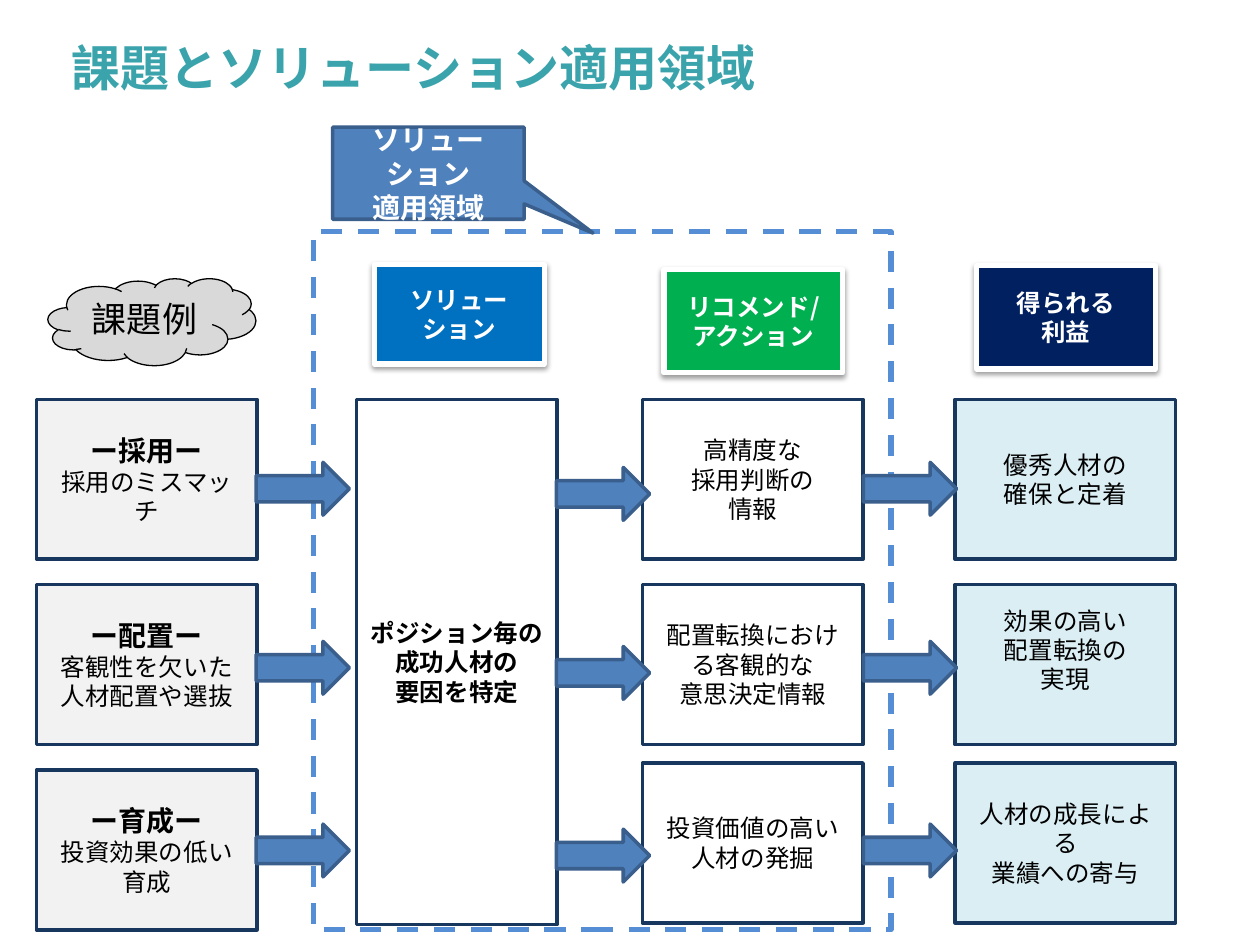
from dataclasses import dataclass

from lxml.etree import SubElement
from pptx import Presentation
from pptx.dml.color import RGBColor
from pptx.enum.dml import MSO_LINE
from pptx.enum.shapes import MSO_SHAPE as Shape
from pptx.enum.text import MSO_ANCHOR as Anchor, MSO_AUTO_SIZE as AutoSize, PP_ALIGN as Align
from pptx.oxml.ns import qn
from pptx.util import Pt


@dataclass(frozen=True)
class Theme:
    font: str = "Noto Sans CJK JP"
    title: str = "3BA3AB"
    white: str = "FFFFFF"
    black: str = "000000"
    navy_line: str = "17375E"
    issue: str = "F2F2F2"
    benefit: str = "DBEEF4"
    solution_head: str = "0070C0"
    action_head: str = "00B050"
    benefit_head: str = "002060"
    cloud: str = "D9D9D9"
    frame: str = "558ED5"
    accent: str = "4F81BD"
    accent_line: str = "3A5F8C"
    title_size: int = 28
    cloud_size: int = 20
    lead_size: int = 16
    body_size: int = 14


@dataclass(frozen=True)
class Line:
    text: str
    size: int
    bold: bool = False


class Board:
    def __init__(self, slide, theme):
        self.slide = slide
        self.theme = theme

    def add_lines(self, frame, lines, color, align=Align.CENTER):
        for index, line in enumerate(lines):
            para = frame.add_paragraph() if index else frame.paragraphs[0]
            para.alignment = align
            run = para.add_run()
            run.text = line.text
            font = run.font
            font.name, font.size, font.bold = self.theme.font, Pt(line.size), line.bold
            font.color.rgb = RGBColor.from_string(color)
            # Japanese glyphs take the East Asian typeface
            SubElement(font._element, qn("a:ea"), typeface=self.theme.font)

    def title(self, text, left, top, width, height):
        holder = self.slide.shapes.title
        holder.left, holder.top, holder.width, holder.height = map(Pt, (left, top, width, height))
        frame = holder.text_frame
        frame.auto_size = AutoSize.NONE
        frame.vertical_anchor = Anchor.MIDDLE
        frame.margin_left = Pt(13.5)
        self.add_lines(frame, [Line(text, self.theme.title_size, True)], self.theme.title,
                       Align.LEFT)

    def shape(self, kind, left, top, width, height, fill, line, weight):
        item = self.slide.shapes.add_shape(kind, *map(Pt, (left, top, width, height)))
        item.shadow.inherit = False
        if fill:
            item.fill.solid()
            item.fill.fore_color.rgb = RGBColor.from_string(fill)
        else:
            item.fill.background()
        item.line.color.rgb = RGBColor.from_string(line)
        item.line.width = Pt(weight)
        return item

    def box(self, left, top, width, height, fill, lines, bottom_inset=3.6):
        item = self.shape(Shape.RECTANGLE, left, top, width, height, fill, self.theme.navy_line, 2)
        item.text_frame.margin_bottom = Pt(bottom_inset)
        self.add_lines(item.text_frame, lines, self.theme.black)

    def heading(self, left, top, width, height, fill, texts):
        """White-edged column heading with a soft shadow below it."""
        item = self.shape(Shape.RECTANGLE, left, top, width, height, fill, self.theme.white, 3)
        effects = item._element.spPr.find(qn("a:effectLst"))
        shadow = SubElement(effects, qn("a:outerShdw"), blurRad=str(Pt(3.1)), dist=str(Pt(1.6)),
                            dir="5400000", rotWithShape="0")
        color = SubElement(shadow, qn("a:srgbClr"), val=self.theme.black)
        SubElement(color, qn("a:alpha"), val="38000")
        self.add_lines(item.text_frame, [Line(t, self.theme.body_size, True) for t in texts],
                       self.theme.white)

    def cloud(self, left, top, width, height, text):
        item = self.shape(Shape.CLOUD, left, top, width, height, self.theme.cloud,
                          self.theme.black, 0.75)
        item.text_frame.vertical_anchor = Anchor.TOP
        self.add_lines(item.text_frame, [Line(text, self.theme.cloud_size)], self.theme.black)

    def dashed_frame(self, left, top, width, height):
        item = self.shape(Shape.RECTANGLE, left, top, width, height, None, self.theme.frame, 3)
        item.line.dash_style = MSO_LINE.DASH

    def arrow(self, left, top):
        self.shape(Shape.RIGHT_ARROW, left, top, 53.3, 30.2, self.theme.accent,
                   self.theme.accent_line, 2)

    def callout(self, left, top, width, height, texts, tip):
        item = self.shape(Shape.RECTANGULAR_CALLOUT, left, top, width, height,
                          self.theme.accent, self.theme.accent_line, 2)
        item.adjustments[0], item.adjustments[1] = tip
        self.add_lines(item.text_frame, [Line(t, self.theme.lead_size, True) for t in texts],
                       self.theme.white)


BOX_W, BOX_H = 126, 91.4
BODY_TOP, ROW_PITCH = 228.2, 105.9
BLANK_LINE = 17
ISSUES = [
    ("ー採用ー", "採用のミスマッチ"),
    ("ー配置ー", "客観性を欠いた", "人材配置や選抜"),
    ("ー育成ー", "投資効果の低い", "育成"),
]
ACTIONS = [
    ("高精度な", "採用判断の", "情報"),
    ("配置転換における客観的な", "意思決定情報"),
    ("投資価値の高い", "人材の発掘"),
]
BENEFITS = [
    ("優秀人材の", "確保と定着"),
    ("効果の高い", "配置転換の", "実現"),
    ("人材の成長による", "業績への寄与"),
]
ARROW_COLUMNS = [(146.4, 0), (318, 2.9), (493.4, 0)]  # left, downward shift
ARROW_TOPS = [264.2, 366.5, 470.9]


def main():
    deck = Presentation()
    deck.slide_width, deck.slide_height = Pt(720), Pt(540)
    theme = Theme()
    board = Board(deck.slides.add_slide(deck.slide_layouts[5]), theme)
    body = theme.body_size

    board.title("課題とソリューション適用領域", 27.4, 17.3, 626.4, 41.8)
    board.heading(213.8, 151.2, 97.2, 56.9, theme.solution_head, ["ソリューション"])
    board.heading(379.4, 154.1, 102.2, 59, theme.action_head, ["リコメンド/", "アクション"])
    board.heading(558, 151.9, 102.2, 59, theme.benefit_head, ["得られる", "利益"])

    board.box(203.8, BODY_TOP, 114.5, 300.2, theme.white,
              [Line(t, body, True) for t in ("ポジション毎の", "成功人材の", "要因を特定")])
    for row, (issue, action, benefit) in enumerate(zip(ISSUES, ACTIONS, BENEFITS)):
        top = BODY_TOP + row * ROW_PITCH
        outcome_top = min(top, 436)  # the last row ends level with the solution box
        lead, *details = issue
        board.box(20.9, top, BOX_W, BOX_H, theme.issue,
                  [Line(lead, theme.lead_size, True)] + [Line(t, body) for t in details])
        board.box(367.2, outcome_top, BOX_W, BOX_H, theme.white,
                  [Line(t, body) for t in action])
        board.box(545.8, outcome_top, BOX_W, BOX_H, theme.benefit,
                  [Line(t, body) for t in benefit],
                  bottom_inset=3.6 + BLANK_LINE * (len(benefit) == 3))

    board.cloud(27.4, 159.1, 118.8, 49.7, "課題例")
    board.dashed_frame(179.3, 132.5, 329.8, 398.9)
    for left, shift in ARROW_COLUMNS:
        for top in ARROW_TOPS:
            board.arrow(left, top + shift)
    board.callout(190.1, 72.7, 109.4, 52.6, ["ソリューション", "適用領域"], (0.86, 0.65))
    deck.save("out.pptx")


if __name__ == "__main__":
    main()
